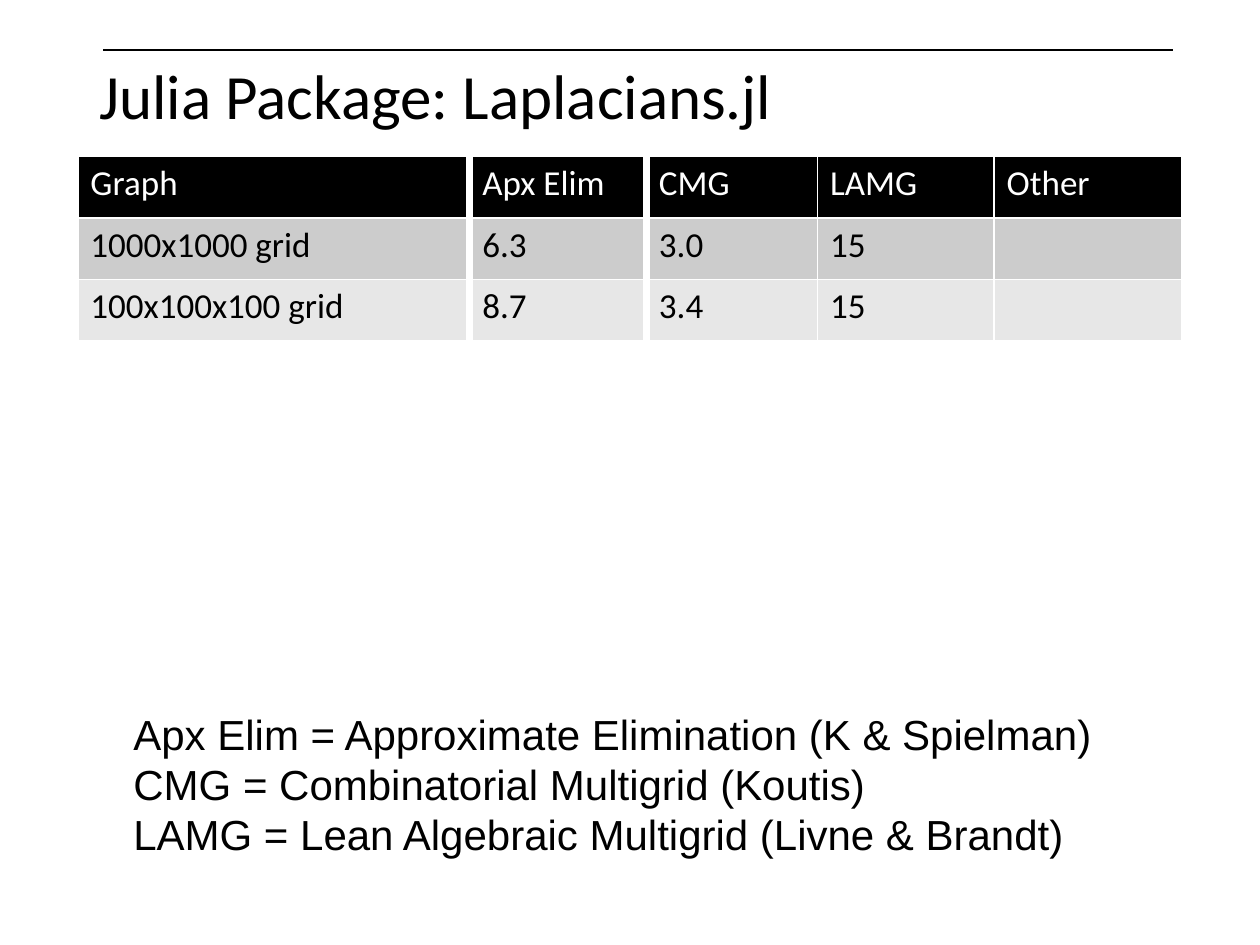
from lxml import etree
from pptx import Presentation
from pptx import util as u
from pptx.dml.color import RGBColor
from pptx.enum import shapes, text
from pptx.oxml import parse_xml
from pptx.oxml.ns import nsdecls, qn


def color(hex_str):
    return RGBColor.from_string(hex_str)


def write(tf, content, size=20, font="Calibri", fill="000000", spacing=None):
    """Write each line of content as one formatted paragraph."""
    for i, line in enumerate(content.split("\n")):
        p = tf.add_paragraph() if i else tf.paragraphs[0]
        p.line_spacing = spacing
        r = p.add_run()
        r.text = line
        r.font.size = u.Pt(size)
        r.font.name = font
        r.font.color.rgb = color(fill)


prs = Presentation()
prs.slide_width, prs.slide_height = u.Cm(25.4), u.Cm(19.05)
s = prs.slides.add_slide(prs.slide_layouts[6])

# Rule above the title
rule = s.shapes.add_connector(shapes.MSO_CONNECTOR.STRAIGHT,
                              u.Cm(2.08), u.Cm(1.01), u.Cm(23.65), u.Cm(1.01))
rule.line.color.rgb = color("000000")
rule.line.width = u.Pt(1)
etree.SubElement(rule._element.spPr, qn("a:effectLst"))

# Title
title = s.shapes.add_textbox(u.Cm(1.75), u.Cm(0.15), u.Cm(21.9), u.Cm(3.68))
tf = title.text_frame
tf.word_wrap = True
tf.vertical_anchor = text.MSO_ANCHOR.MIDDLE
write(tf, "Julia Package: Laplacians.jl", size=36, spacing=0.9)

# Solver timings
rows = [
    ["Graph", "Apx Elim", "CMG", "LAMG", "Other"],
    ["1000x1000 grid", "6.3", "3.0", "15", ""],
    ["100x100x100 grid", "8.7", "3.4", "15", ""],
]
widths = [7.9, 3.56, 3.45, 3.56, 3.78]
row_fills = ["000000", "CCCCCC", "E7E7E7"]
row_height = 1.24
thick_edges = (1, 2)  # column boundaries drawn with a heavy line

table = s.shapes.add_table(len(rows), len(widths), u.Cm(1.57), u.Cm(3.15),
                           u.Cm(sum(widths)), u.Cm(row_height * len(rows))).table
for col, width in zip(table.columns, widths):
    col.width = u.Cm(width)
for i, values in enumerate(rows):
    table.rows[i].height = u.Cm(row_height)
    for j, value in enumerate(values):
        cell = table.cell(i, j)
        tc_pr = cell._tc.get_or_add_tcPr()
        for side, edge in (("L", j), ("R", j + 1), ("T", None), ("B", None)):
            width = u.Pt(4.5 if edge in thick_edges else 1)
            tc_pr.append(parse_xml(
                f'<a:ln{side} {nsdecls("a")} w="{width}"><a:solidFill>'
                f'<a:srgbClr val="FFFFFF"/></a:solidFill></a:ln{side}>'))
        cell.fill.solid()
        cell.fill.fore_color.rgb = color(row_fills[i])
        if value:
            write(cell.text_frame, value, fill="000000" if i else "FFFFFF")

# Abbreviations
legend = s.shapes.add_textbox(u.Cm(2.44), u.Cm(14.15), u.Cm(20.04), u.Cm(3.33))
tf = legend.text_frame
tf.word_wrap = False
tf.auto_size = text.MSO_AUTO_SIZE.SHAPE_TO_FIT_TEXT
write(tf, "Apx Elim = Approximate Elimination (K & Spielman)\n"
          "CMG = Combinatorial Multigrid (Koutis)\n"
          "LAMG = Lean Algebraic Multigrid (Livne & Brandt)",
      size=24, font="Arial")

prs.save("out.pptx")
